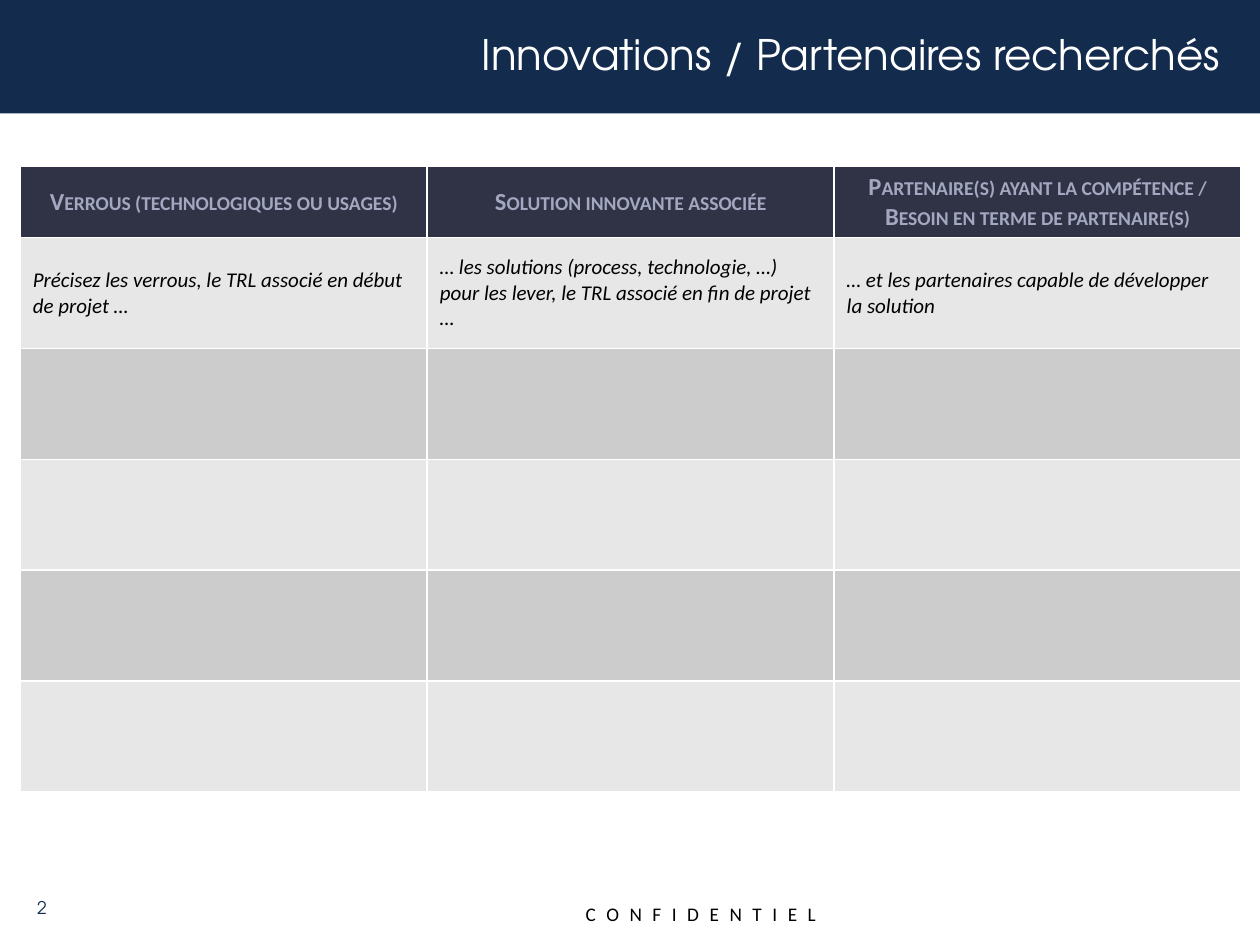
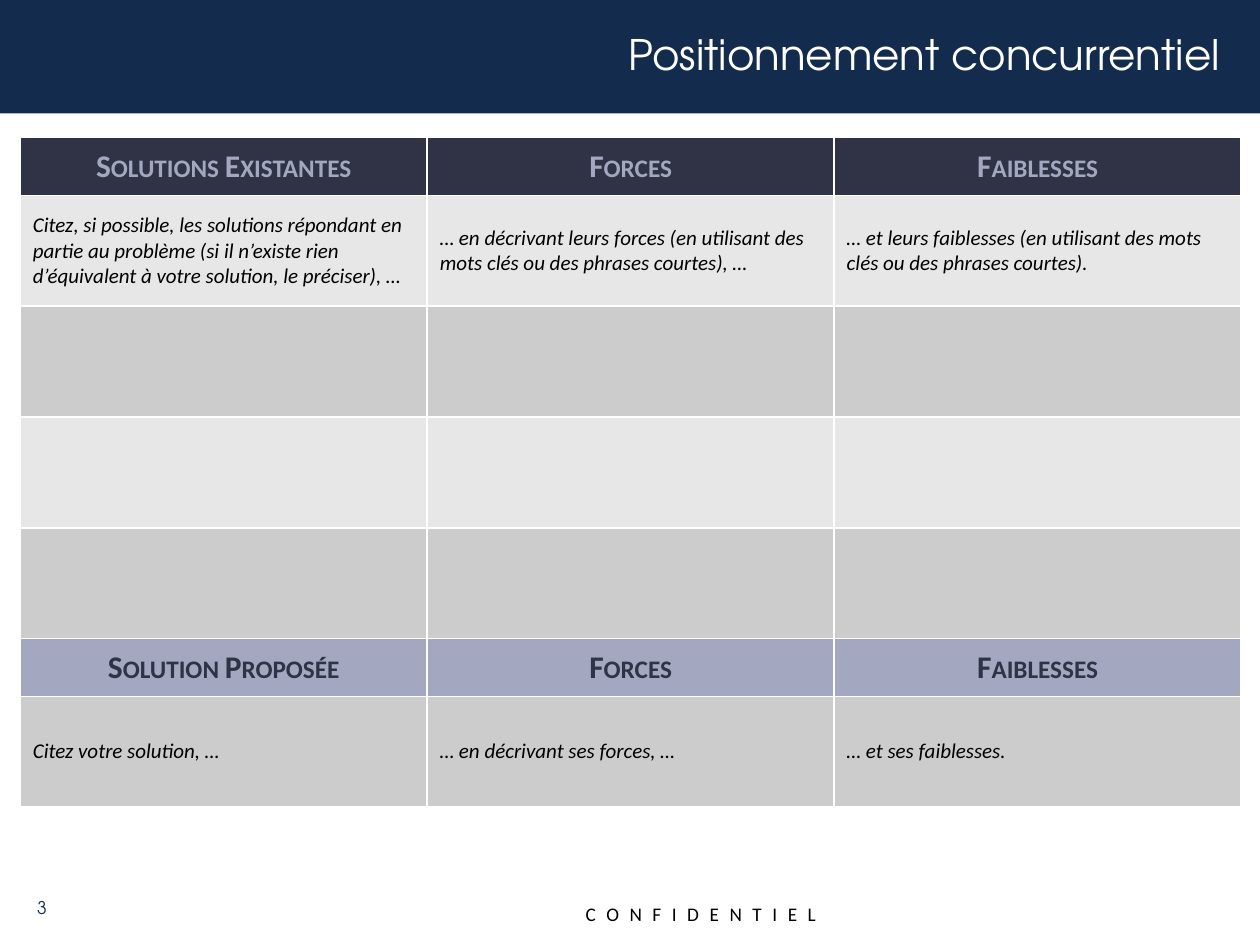
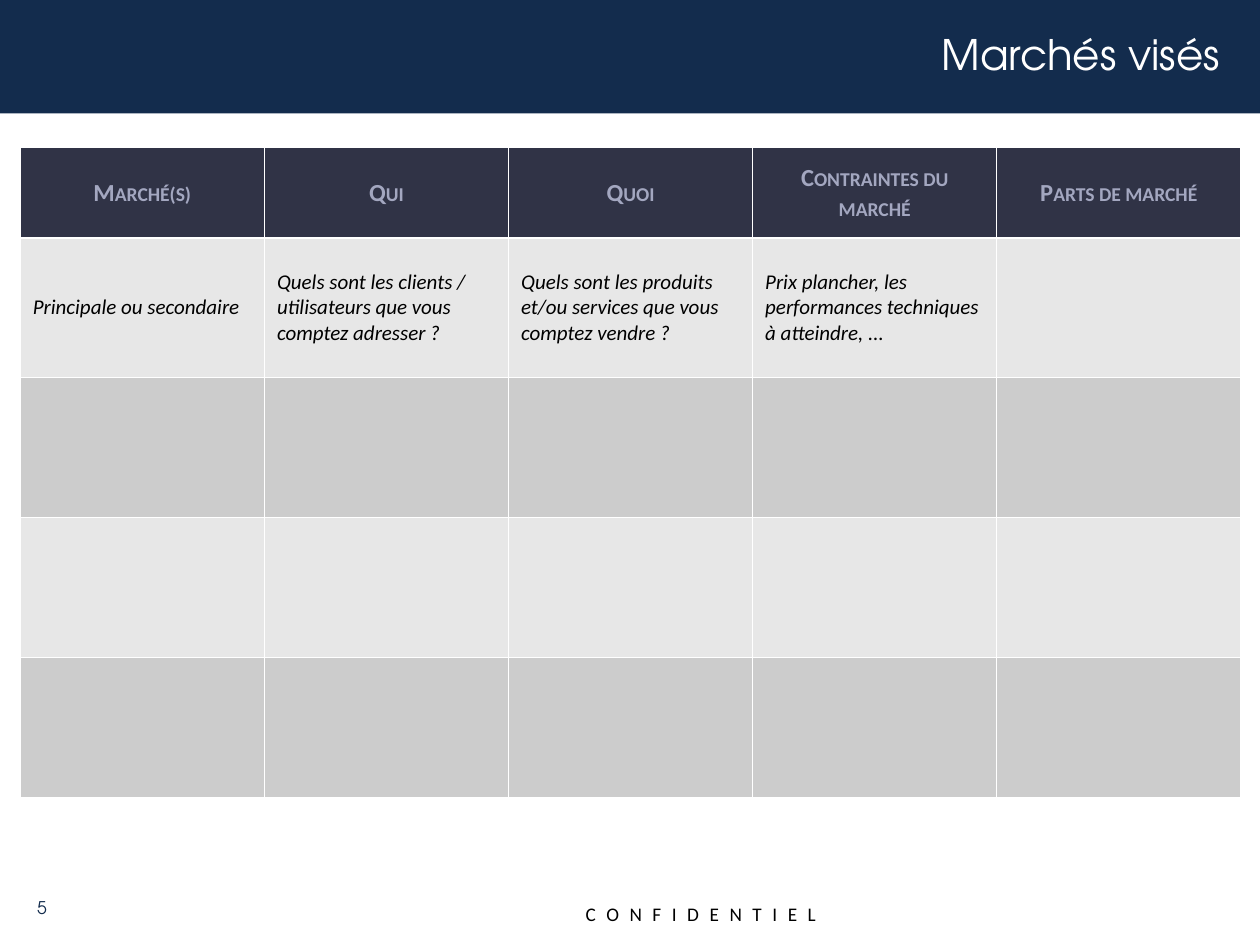
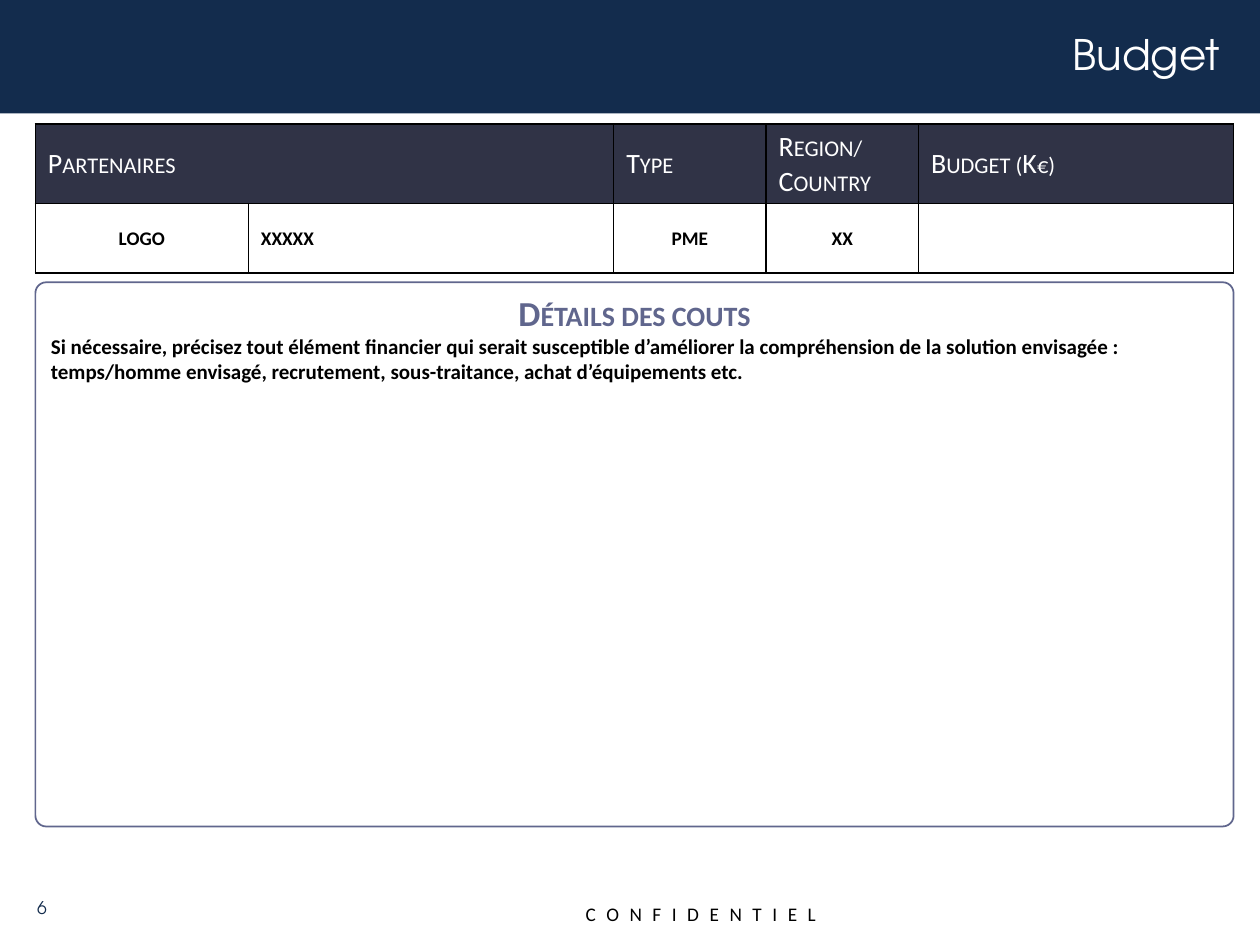
from dataclasses import dataclass

from lxml import etree
from pptx import Presentation
from pptx.dml.color import RGBColor
from pptx.enum.shapes import MSO_SHAPE as Preset
from pptx.enum.text import MSO_ANCHOR as Anchor, MSO_AUTO_SIZE as AutoSize, PP_ALIGN as Align
from pptx.oxml.ns import qn
from pptx.util import Pt

# Shared look
COLORS = {
    "navy": "132C4D", "white": "FFFFFF", "black": "000000",
    "dark": "303346", "lavender": "A3A7C0", "violet": "60668D",
    "light_row": "E7E7E7", "grey_row": "CCCCCC",
}
BODY_FONT = "Calibri"
TITLE_FONT = "TeX Gyre Adventor"
SLIDE_WIDTH, SLIDE_HEIGHT = 720, 540
TITLE_ONLY = 5
GRID_LEFT, GRID_WIDTH = 11.6, 697.6
BUDGET_LEFT, BUDGET_WIDTH = 20.2, 684.7


@dataclass(frozen=True)
class TextStyle:
    size: float
    color: str
    font: str = BODY_FONT
    bold: bool = False
    italic: bool = False
    small_caps: bool = False
    spacing: float = 0
    align: Align = Align.LEFT


@dataclass(frozen=True)
class Box:
    left: float
    top: float
    width: float
    height: float

    def points(self) -> tuple:
        return Pt(self.left), Pt(self.top), Pt(self.width), Pt(self.height)


@dataclass(frozen=True)
class Row:
    height: float
    fill: str
    style: TextStyle
    texts: tuple = ()
    left_columns: tuple = ()


@dataclass(frozen=True)
class Grid:
    box: Box
    columns: tuple
    rows: tuple
    border: str = "white"
    merged_heading: int = 1


@dataclass(frozen=True)
class Page:
    title: str
    number: int
    grid: Grid


TITLE = TextStyle(24, "white", TITLE_FONT, align=Align.RIGHT)
NUMBER = TextStyle(10, "navy", TITLE_FONT, align=Align.RIGHT)
FOOTER = TextStyle(11, "black", spacing=6)
HEADING = TextStyle(14, "lavender", bold=True, small_caps=True, align=Align.CENTER)
LARGE_HEADING = TextStyle(18, "lavender", bold=True, small_caps=True, align=Align.CENTER)
PROPOSAL_HEADING = TextStyle(18, "dark", bold=True, small_caps=True, align=Align.CENTER)
HINT = TextStyle(12, "black", italic=True)
BUDGET_HEADING = TextStyle(16, "white", small_caps=True)
BUDGET_ENTRY = TextStyle(11, "black", bold=True, align=Align.CENTER)
COST_HEADING = TextStyle(20, "violet", bold=True, small_caps=True, align=Align.CENTER)
COST_NOTE = TextStyle(12, "black", bold=True)

TITLE_BOX = Box(10.8, 10, 693.4, 41.8)
NUMBER_BOX = Box(-2.9, 504, 36.7, 28.8)
FOOTER_BOX = Box(327.6, 511.9, 153.4, 20.9)
COST_BOX = Box(BUDGET_LEFT, 161.3, BUDGET_WIDTH, 311)


# Text and colour helpers
def rgb(name: str) -> RGBColor:
    return RGBColor.from_string(COLORS[name])


def write(paragraph, text: str, style: TextStyle, align: Align = None) -> None:
    paragraph.alignment = style.align if align is None else align
    run = paragraph.add_run()
    run.text = text
    font = run.font
    font.size, font.name = Pt(style.size), style.font
    font.bold, font.italic = style.bold, style.italic
    font.color.rgb = rgb(style.color)
    properties = run._r.get_or_add_rPr()
    if style.small_caps:
        properties.set("cap", "small")
    if style.spacing:
        properties.set("spc", str(int(style.spacing * 100)))


def add_text(slide, box: Box, text: str, style: TextStyle):
    shape = slide.shapes.add_textbox(*box.points())
    write(shape.text_frame.paragraphs[0], text, style)
    return shape


# Tables
def set_borders(cell, color: str) -> None:
    properties = cell._tc.get_or_add_tcPr()
    for index, side in enumerate(("lnL", "lnR", "lnT", "lnB")):
        line = etree.Element(qn(f"a:{side}"), w=str(Pt(1)))
        fill = etree.SubElement(line, qn("a:solidFill"))
        etree.SubElement(fill, qn("a:srgbClr"), val=COLORS[color])
        properties.insert(index, line)


def add_grid(slide, grid: Grid) -> None:
    frame = slide.shapes.add_table(len(grid.rows), len(grid.columns), *grid.box.points())
    table = frame.table
    table.first_row = table.horz_banding = False
    for column, width in zip(table.columns, grid.columns):
        column.width = Pt(width)
    for row_index, row in enumerate(grid.rows):
        table.rows[row_index].height = Pt(row.height)
        for column_index in range(len(grid.columns)):
            cell = table.cell(row_index, column_index)
            cell.fill.solid()
            cell.fill.fore_color.rgb = rgb(row.fill)
            cell.vertical_anchor = Anchor.MIDDLE
            set_borders(cell, grid.border)
            text = row.texts[column_index] if column_index < len(row.texts) else ""
            if text:
                align = Align.LEFT if column_index in row.left_columns else None
                write(cell.text_frame.paragraphs[0], text, row.style, align)
    if grid.merged_heading > 1:
        table.cell(0, 0).merge(table.cell(0, grid.merged_heading - 1))
    frame.height = Pt(grid.box.height)


def hint_rows(count: int, height: float, hints: tuple) -> tuple:
    """Alternate light and grey rows; only the first holds text."""
    fills = ("light_row", "grey_row")
    return tuple(Row(height, fills[index % 2], HINT, hints if index == 0 else ())
                 for index in range(count))


def even_grid(top: float, height: float, column_count: int, rows: tuple) -> Grid:
    columns = (GRID_WIDTH / column_count,) * column_count
    return Grid(Box(GRID_LEFT, top, GRID_WIDTH, height), columns, rows)


# Slide parts
def add_shared_parts(slide) -> None:
    """Draw the band and footer, then place them in the layout behind every slide."""
    band = slide.shapes.add_shape(Preset.RECTANGLE, 0, 0, Pt(SLIDE_WIDTH), Pt(64.8))
    band.shadow.inherit = False
    band.fill.solid()
    band.fill.fore_color.rgb = rgb("navy")
    band.line.fill.background()
    footer = add_text(slide, FOOTER_BOX, "CONFIDENTIEL", FOOTER)
    footer.text_frame.word_wrap = False
    footer.text_frame.auto_size = AutoSize.SHAPE_TO_FIT_TEXT
    layout_tree = slide.slide_layout.element.cSld.spTree
    for index, shape in enumerate((band, footer)):
        shape.element.nvSpPr.cNvPr.set("id", str(20 + index))
        layout_tree.insert(2 + index, shape.element)


def add_page(presentation, page: Page):
    slide = presentation.slides.add_slide(presentation.slide_layouts[TITLE_ONLY])
    title = slide.shapes.title
    title.left, title.top, title.width, title.height = TITLE_BOX.points()
    title.text_frame.vertical_anchor = Anchor.MIDDLE
    title.text_frame.auto_size = AutoSize.NONE
    write(title.text_frame.paragraphs[0], page.title, TITLE)
    number = add_text(slide, NUMBER_BOX, str(page.number), NUMBER)
    number.text_frame.word_wrap = True
    number.text_frame.vertical_anchor = Anchor.MIDDLE
    add_grid(slide, page.grid)
    return slide


def add_cost_details(slide) -> None:
    panel = slide.shapes.add_shape(Preset.ROUNDED_RECTANGLE, *COST_BOX.points())
    panel.adjustments[0] = 0.02
    panel.shadow.inherit = False
    panel.fill.background()
    panel.line.color.rgb = rgb("violet")
    panel.line.width = Pt(1)
    frame = panel.text_frame
    frame.word_wrap = True
    frame.vertical_anchor = Anchor.TOP
    write(frame.paragraphs[0], "Détails des couts", COST_HEADING)
    write(frame.add_paragraph(),
          "Si nécessaire, précisez tout élément financier qui serait susceptible "
          "d’améliorer la compréhension de la solution envisagée : temps/homme envisagé, "
          "recrutement, sous-traitance, achat d’équipements etc.", COST_NOTE)


# Content
INNOVATIONS = even_grid(95, 357.1, 3, (
    Row(33.1, "dark", HEADING, (
        "Verrous (technologiques ou usages)",
        "Solution innovante associée",
        "Partenaire(s) ayant la compétence / Besoin en terme de partenaire(s)")),
    *hint_rows(5, 63.3, (
        "Précisez les verrous, le TRL associé en début de projet …",
        "… les solutions (process, technologie, …) pour les lever, "
        "le TRL associé en fin de projet …",
        "… et les partenaires capable de développer la solution")),
))

COMPETITION = even_grid(78.6, 382.3, 3, (
    Row(33.1, "dark", LARGE_HEADING, ("Solutions Existantes", "Forces", "Faiblesses")),
    *hint_rows(4, 63.3, (
        "Citez, si possible, les solutions répondant en partie au problème "
        "(si il n’existe rien d’équivalent à votre solution, le préciser), …",
        "… en décrivant leurs forces (en utilisant des mots clés ou des phrases courtes), …",
        "… et leurs faiblesses (en utilisant des mots clés ou des phrases courtes).")),
    Row(33.1, "lavender", PROPOSAL_HEADING, ("Solution Proposée", "Forces", "Faiblesses")),
    Row(63.3, "grey_row", HINT, (
        "Citez votre solution, …", "… en décrivant ses forces, …", "… et ses faiblesses.")),
))

MARKETS = even_grid(84.4, 371.5, 5, (
    Row(51.5, "dark", HEADING, (
        "Marché(s)", "Qui", "Quoi", "Contraintes du marché", "Parts de marché")),
    *hint_rows(4, 80, (
        "Principale ou secondaire",
        "Quels sont les clients / utilisateurs que vous comptez adresser ?",
        "Quels sont les produits et/ou services que vous comptez vendre ?",
        "Prix plancher, les performances techniques à atteindre, ...")),
))

BUDGET = Grid(
    Box(BUDGET_LEFT, 70.8, BUDGET_WIDTH, 85),
    (121.7, 208.8, 87.1, 87.1, 180),
    (Row(21.6, "dark", BUDGET_HEADING,
         ("Partenaires", "", "Type", "Region/ Country", "Budget (K€)")),
     Row(39.6, "white", BUDGET_ENTRY, ("LOGO", "XXXXX", "PME", "XX"), left_columns=(1,))),
    border="black", merged_heading=2)

PAGES = (
    Page("Innovations / Partenaires recherchés", 2, INNOVATIONS),
    Page("Positionnement concurrentiel", 3, COMPETITION),
    Page("Marchés visés", 5, MARKETS),
    Page("Budget", 6, BUDGET),
)


def main() -> None:
    presentation = Presentation()
    presentation.slide_width, presentation.slide_height = Pt(SLIDE_WIDTH), Pt(SLIDE_HEIGHT)
    slides = [add_page(presentation, page) for page in PAGES]
    add_shared_parts(slides[0])
    add_cost_details(slides[-1])
    presentation.save("out.pptx")


if __name__ == "__main__":
    main()
